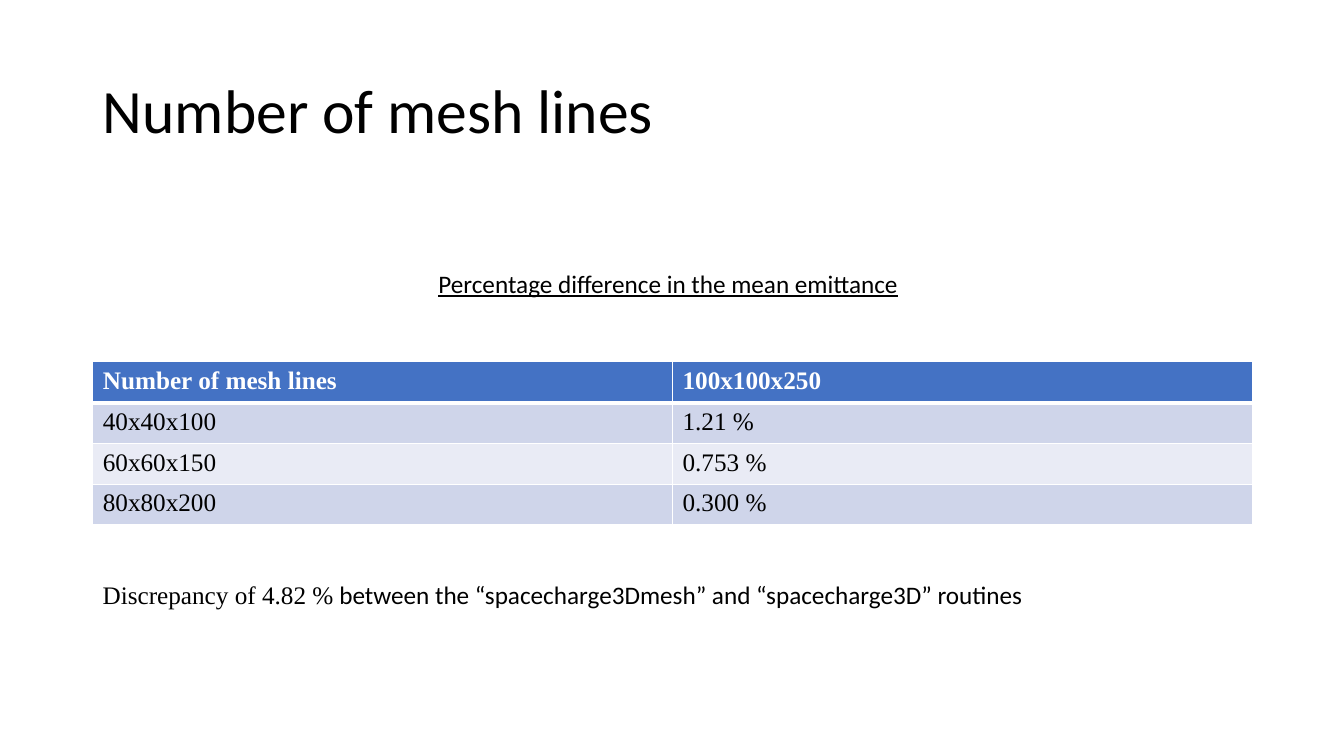
"""Slide comparing the mean emittance for several numbers of mesh lines."""
from dataclasses import dataclass

from lxml.etree import SubElement
from pptx import Presentation
from pptx.dml.color import RGBColor
from pptx.enum.text import MSO_ANCHOR, MSO_AUTO_SIZE, PP_ALIGN
from pptx.oxml.ns import qn
from pptx.slide import Slide
from pptx.table import _Cell as Cell
from pptx.util import Inches, Pt

COLORS = {
    "black": "000000",
    "white": "FFFFFF",
    "header": "4472C4",
    "odd": "CFD5EA",
    "even": "E9EBF5",
}
SANS = "Calibri"
SERIF = "Times New Roman"
LEFT = 0.92
WIDTH = 11.5
ROWS = [
    ("Number of mesh lines", "100x100x250"),
    ("40x40x100", "1.21 %"),
    ("60x60x150", "0.753 %"),
    ("80x80x200", "0.300 %"),
]


@dataclass
class Span:
    text: str
    face: str = SANS
    size: float = 18
    color: str = "black"
    bold: bool = False
    underline: bool = False


@dataclass
class Note:
    left: float
    top: float
    width: float
    spans: list[Span]


NOTES = [
    Note(4.25, 2.61, 4.83,
         [Span("Percentage difference in the mean emittance", underline=True)]),
    Note(LEFT, 5.7, 9.44,
         [Span("Discrepancy of 4.82 %", SERIF),
          Span(" between the “spacecharge3Dmesh” and “spacecharge3D” routines")]),
]


def rgb(name: str) -> RGBColor:
    return RGBColor.from_string(COLORS[name])


def write_spans(para, spans: list[Span]) -> None:
    for span in spans:
        run = para.add_run()
        run.text = span.text
        font = run.font
        font.name, font.size = span.face, Pt(span.size)
        font.bold, font.underline = span.bold, span.underline
        font.color.rgb = rgb(span.color)


def add_title(page: Slide, text: str) -> None:
    title = page.shapes.title
    title.left, title.top = Inches(LEFT), Inches(0.4)
    title.width, title.height = Inches(WIDTH), Inches(1.45)
    title.text_frame.vertical_anchor = MSO_ANCHOR.MIDDLE
    para = title.text_frame.paragraphs[0]
    para.alignment, para.line_spacing = PP_ALIGN.LEFT, 0.9
    write_spans(para, [Span(text, size=44)])


def add_note(page: Slide, note: Note) -> None:
    box = page.shapes.add_textbox(
        Inches(note.left), Inches(note.top), Inches(note.width), Inches(0.71))
    box.text_frame.word_wrap = True
    box.text_frame.auto_size = MSO_AUTO_SIZE.NONE
    write_spans(box.text_frame.paragraphs[0], note.spans)


def set_borders(cell: Cell, top: float, bottom: float) -> None:
    properties = cell._tc.get_or_add_tcPr()
    for side, width in {"L": 1, "R": 1, "T": top, "B": bottom}.items():
        line = SubElement(properties, qn(f"a:ln{side}"), w=str(Pt(width)))
        fill = SubElement(line, qn("a:solidFill"))
        SubElement(fill, qn("a:srgbClr"), val=COLORS["white"])


def add_mesh_table(page: Slide) -> None:
    frame = page.shapes.add_table(
        len(ROWS), len(ROWS[0]), Inches(LEFT), Inches(3.59), Inches(WIDTH), Inches(1.62))
    for row, values in enumerate(ROWS):
        header = row == 0
        band = "header" if header else "odd" if row % 2 else "even"
        for column, value in enumerate(values):
            cell = frame.table.cell(row, column)
            set_borders(cell, top=3 if row == 1 else 1, bottom=3 if header else 1)
            cell.fill.solid()
            cell.fill.fore_color.rgb = rgb(band)
            color = "white" if header else "black"
            write_spans(cell.text_frame.paragraphs[0],
                        [Span(value, SERIF, color=color, bold=header)])


def main() -> None:
    deck = Presentation()
    deck.slide_width, deck.slide_height = Inches(13.33), Inches(7.5)
    page = deck.slides.add_slide(deck.slide_layouts[5])
    add_title(page, "Number of mesh lines")
    add_mesh_table(page)
    for note in NOTES:
        add_note(page, note)
    deck.save("out.pptx")


if __name__ == "__main__":
    main()
